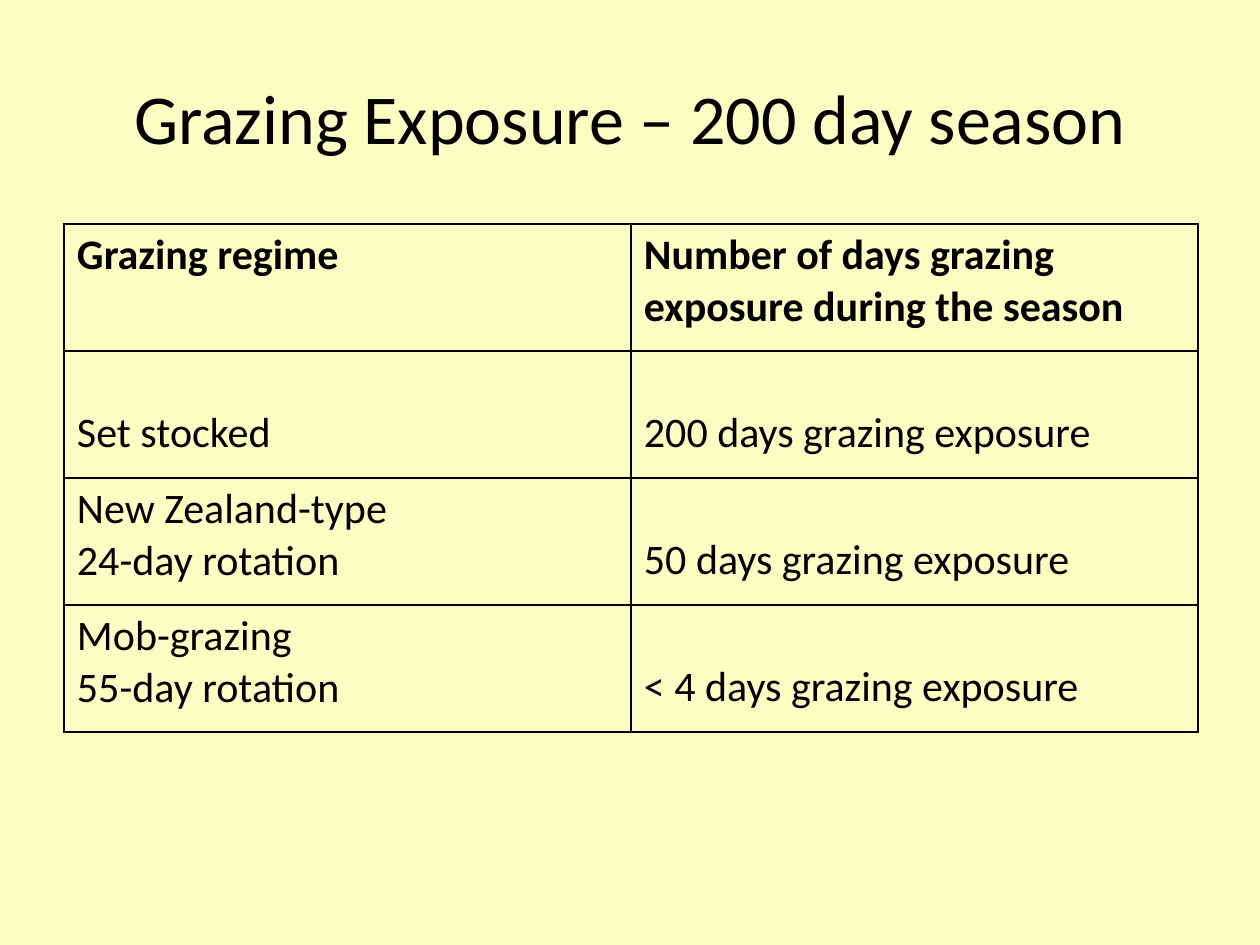
from dataclasses import dataclass

from pptx import Presentation
from pptx.dml.color import RGBColor
from pptx.enum.text import MSO_ANCHOR, PP_ALIGN
from pptx.oxml import parse_xml
from pptx.oxml.ns import nsdecls
from pptx.slide import Slide
from pptx.table import _Cell
from pptx.text.text import TextFrame
from pptx.util import Emu, Pt

PIXELS_PER_INCH = 126
CREAM = "FAFEC2"
BLACK = "000000"
MARGIN_X = 13
MARGIN_Y = 6
LINE_HEIGHT = 51
COLUMN_WIDTH = 567
ROW_HEIGHT = 127


@dataclass
class CellText:
    lines: tuple[str, ...]
    bold: bool = False
    skipped_lines: int = 0


ROWS = [
    (
        CellText(("Grazing regime",), bold=True),
        CellText(("Number of days grazing exposure during the season",), bold=True),
    ),
    (
        CellText(("Set stocked",), skipped_lines=1),
        CellText(("200 days grazing exposure",), skipped_lines=1),
    ),
    (
        CellText(("New Zealand-type", "24-day rotation")),
        CellText(("50 days grazing exposure",), skipped_lines=1),
    ),
    (
        CellText(("Mob-grazing", "55-day rotation")),
        CellText(("< 4 days grazing exposure",), skipped_lines=1),
    ),
]


def px(length: int) -> Emu:
    return Emu(round(length * 914400 / PIXELS_PER_INCH))


def color(value: str) -> RGBColor:
    return RGBColor.from_string(value)


def write(frame: TextFrame, text: str, *, size: int, bold: bool = False,
          align: PP_ALIGN = PP_ALIGN.LEFT) -> None:
    frame.word_wrap = True
    for index, line in enumerate(text.split("\n")):
        para = frame.add_paragraph() if index else frame.paragraphs[0]
        para.alignment = align
        span = para.add_run()
        span.text = line
        span.font.name = "Calibri"
        span.font.size = Pt(size)
        span.font.bold = bold
        span.font.color.rgb = color(BLACK)


def add_borders(cell: _Cell) -> None:
    properties = cell._tc.get_or_add_tcPr()
    for position, side in enumerate(("lnL", "lnR", "lnT", "lnB")):
        properties.insert(position, parse_xml(
            f'<a:{side} {nsdecls("a")} w="{Pt(1)}"><a:solidFill>'
            f'<a:srgbClr val="{BLACK}"/></a:solidFill></a:{side}>'
        ))


def fill_cell(cell: _Cell, content: CellText) -> None:
    cell.fill.solid()
    cell.fill.fore_color.rgb = color(CREAM)
    cell.margin_left = cell.margin_right = px(MARGIN_X)
    cell.margin_top = px(MARGIN_Y + content.skipped_lines * LINE_HEIGHT)
    cell.margin_bottom = px(MARGIN_Y)
    write(cell.text_frame, "\n".join(content.lines), size=24, bold=content.bold)
    add_borders(cell)


def add_title(page: Slide, text: str) -> None:
    box = page.shapes.add_textbox(px(63), px(38), px(1134), px(157))
    box.text_frame.vertical_anchor = MSO_ANCHOR.MIDDLE
    write(box.text_frame, text, size=40, align=PP_ALIGN.CENTER)


def add_regime_table(page: Slide, rows: list[tuple[CellText, ...]]) -> None:
    columns = len(rows[0])
    table = page.shapes.add_table(
        len(rows), columns, px(64), px(224),
        px(columns * COLUMN_WIDTH), px(len(rows) * ROW_HEIGHT),
    ).table
    for row_index, row in enumerate(rows):
        for column_index, content in enumerate(row):
            fill_cell(table.cell(row_index, column_index), content)


def main() -> None:
    deck = Presentation()
    deck.slide_width, deck.slide_height = px(1260), px(945)
    page = deck.slides.add_slide(deck.slide_layouts[6])
    page.background.fill.solid()
    page.background.fill.fore_color.rgb = color(CREAM)
    add_title(page, "Grazing Exposure – 200 day season")
    add_regime_table(page, ROWS)
    deck.save("out.pptx")


if __name__ == "__main__":
    main()
